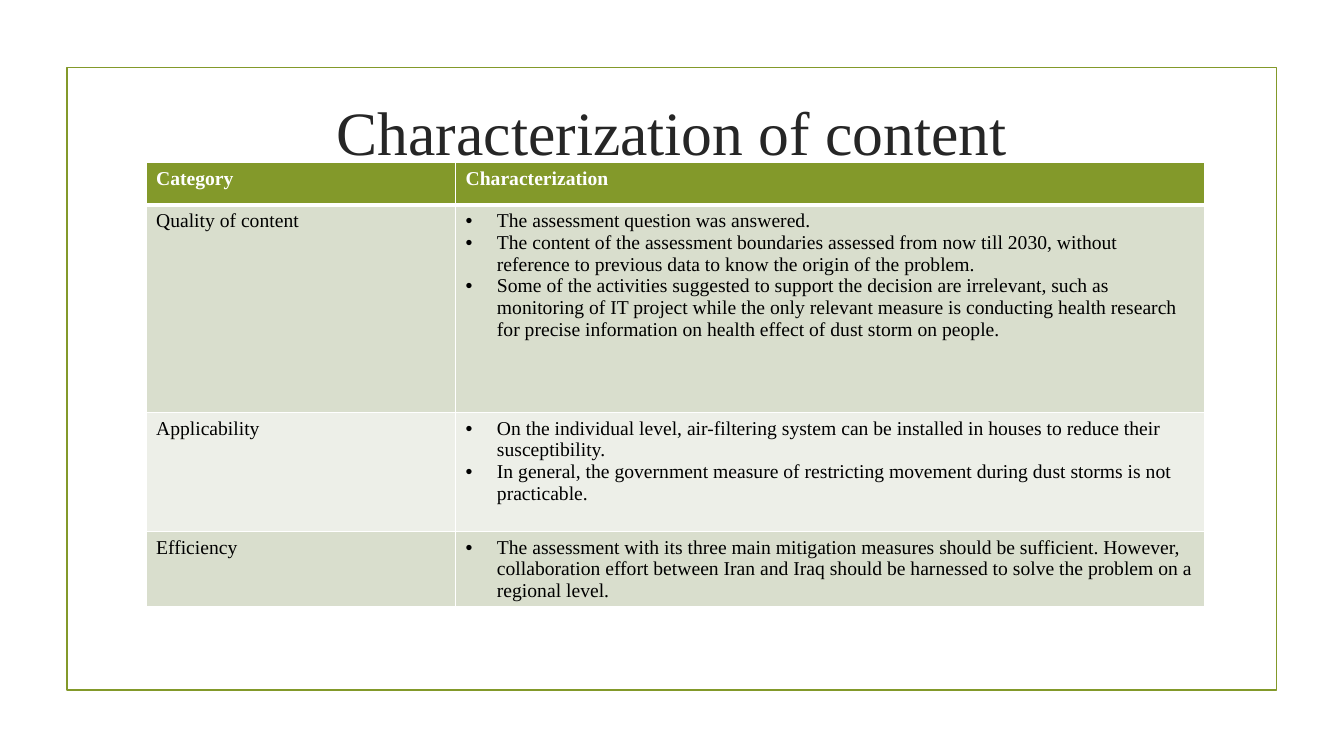
from lxml import etree
from pptx import Presentation
from pptx.dml.color import RGBColor
from pptx.enum import shapes, text
from pptx.oxml import ns
from pptx.util import Cm, Pt

# Content
TITLE = "Characterization of content"
HEADER = ("Category", "Characterization")
ROWS = [
    ("Quality of content", [
        "The assessment question was answered.",
        "The content of the assessment boundaries assessed from now till 2030, "
        "without reference to previous data to know the origin of the problem.",
        "Some of the activities suggested to support the decision are irrelevant, "
        "such as monitoring of IT project while the only relevant measure is "
        "conducting health research for precise information on health effect of "
        "dust storm on people.",
    ]),
    ("Applicability", [
        "On the individual level, air-filtering system can be installed in houses "
        "to reduce their susceptibility.",
        "In general, the government measure of restricting movement during dust "
        "storms is not practicable.",
    ]),
    ("Efficiency", [
        "The assessment with its three main mitigation measures should be "
        "sufficient. However, collaboration effort between Iran and Iraq should be "
        "harnessed to solve the problem on a regional level.",
    ]),
]

# Style
FONT = "Times New Roman"
GREEN = RGBColor(0x83, 0x99, 0x2A)
BAND_DARK = RGBColor(0xD9, 0xDE, 0xCD)
BAND_LIGHT = RGBColor(0xED, 0xEF, 0xE8)
WHITE = RGBColor(0xFF, 0xFF, 0xFF)
BLACK = RGBColor(0, 0, 0)
TITLE_COLOR = RGBColor(0x26, 0x26, 0x26)
COLUMN_WIDTHS = (Cm(7.8), Cm(18.87))
ROW_HEIGHTS = (Cm(1.07), Cm(5.23), Cm(3), Cm(1.88))
INDENT = Cm(0.79)


def format_paragraph(paragraph, size, color, bold=False):
    for run in paragraph.runs:
        run.font.name = FONT
        run.font.size = Pt(size)
        run.font.bold = bold
        run.font.color.rgb = color


def add_bullet(paragraph):
    properties = paragraph._p.get_or_add_pPr()
    properties.set("marL", str(INDENT))
    properties.set("indent", str(-INDENT))
    etree.SubElement(properties, ns.qn("a:buFont"), typeface="Arial")
    etree.SubElement(properties, ns.qn("a:buChar"), char="•")


def set_borders(cell, bottom_width):
    properties = cell._tc.get_or_add_tcPr()
    for side, width in (("L", 1), ("R", 1), ("T", 1), ("B", bottom_width)):
        line = etree.SubElement(properties, ns.qn("a:ln" + side), w=str(Pt(width)))
        fill = etree.SubElement(line, ns.qn("a:solidFill"))
        etree.SubElement(fill, ns.qn("a:srgbClr"), val=str(WHITE))


def fill_cell(cell, lines, fill, color, header=False, bulleted=False):
    set_borders(cell, 3 if header else 1)
    cell.fill.solid()
    cell.fill.fore_color.rgb = fill
    cell.text_frame.text = "\n".join(lines)
    for paragraph in cell.text_frame.paragraphs:
        if bulleted:
            add_bullet(paragraph)
        format_paragraph(paragraph, 14, color, bold=header)


def main():
    presentation = Presentation()
    presentation.slide_width, presentation.slide_height = Cm(33.87), Cm(19.05)
    slide = presentation.slides.add_slide(presentation.slide_layouts[5])

    # Title
    title = slide.shapes.title
    title.left, title.top, title.width, title.height = Cm(3.61), Cm(2.08), Cm(26.67), Cm(2.44)
    title.text_frame.text = TITLE
    title.text_frame.vertical_anchor = text.MSO_ANCHOR.MIDDLE
    title.text_frame.paragraphs[0].alignment = text.PP_ALIGN.CENTER
    format_paragraph(title.text_frame.paragraphs[0], 44, TITLE_COLOR)

    # Frame, placed behind the title
    frame = slide.shapes.add_shape(
        shapes.MSO_SHAPE.RECTANGLE, Cm(1.69), Cm(1.7), Cm(30.48), Cm(15.68))
    frame.shadow.inherit = False
    frame.fill.background()
    frame.line.color.rgb = GREEN
    frame.line.width = Pt(1.25)
    title._element.addprevious(frame._element)

    # Table
    table = slide.shapes.add_table(
        len(ROWS) + 1, len(HEADER), Cm(3.68), Cm(4.1),
        sum(COLUMN_WIDTHS), sum(ROW_HEIGHTS)).table
    for column, width in zip(table.columns, COLUMN_WIDTHS):
        column.width = width
    for row, height in zip(table.rows, ROW_HEIGHTS):
        row.height = height
    for column, heading in enumerate(HEADER):
        fill_cell(table.cell(0, column), [heading], GREEN, WHITE, header=True)
    for row, (category, points) in enumerate(ROWS, start=1):
        band = BAND_DARK if row % 2 else BAND_LIGHT
        fill_cell(table.cell(row, 0), [category], band, BLACK)
        fill_cell(table.cell(row, 1), points, band, BLACK, bulleted=True)

    presentation.save("out.pptx")


if __name__ == "__main__":
    main()
